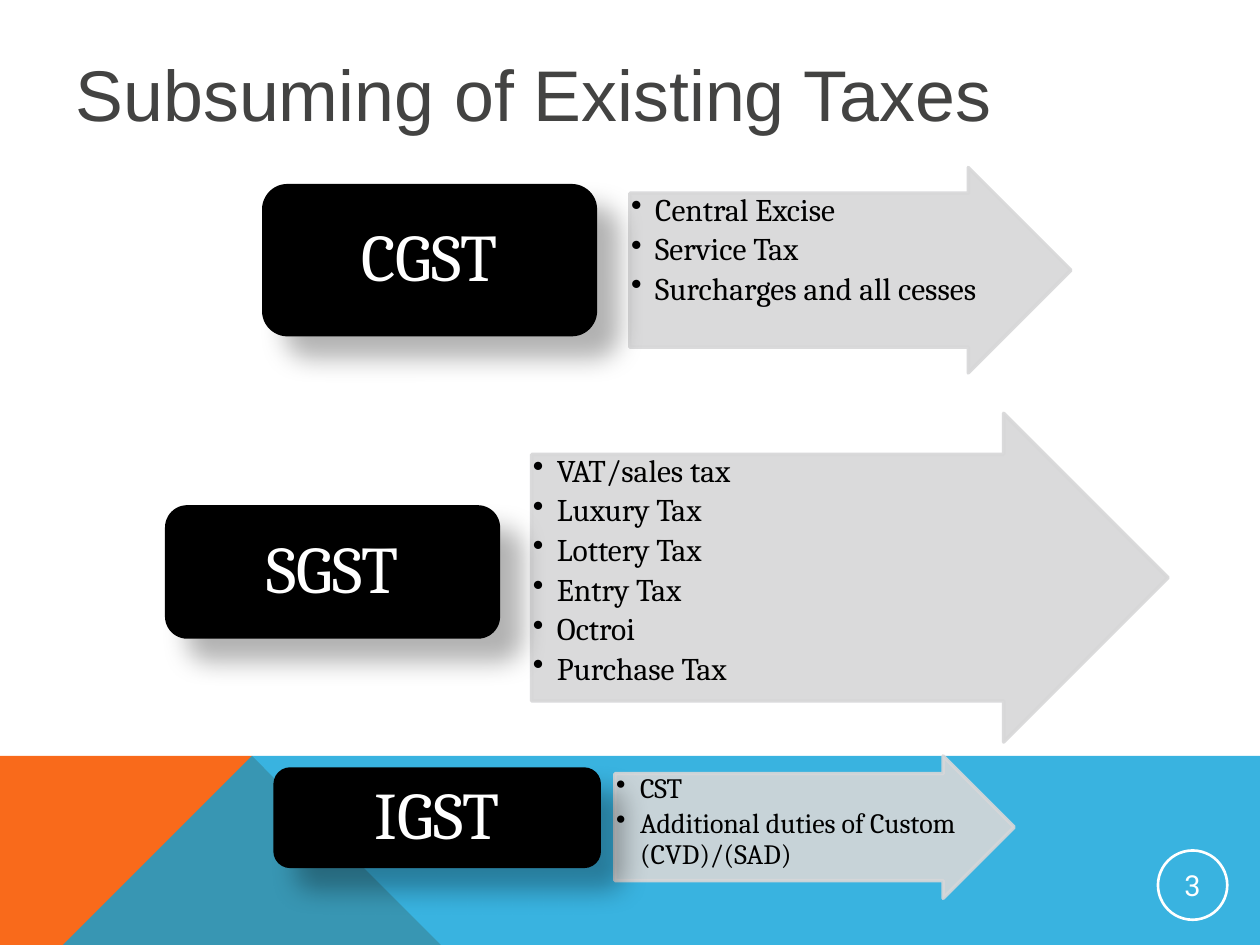
from dataclasses import dataclass

from lxml.etree import SubElement
from pptx import Presentation
from pptx.dml.color import RGBColor
from pptx.enum.shapes import MSO_SHAPE
from pptx.enum.text import MSO_ANCHOR, MSO_AUTO_SIZE, PP_ALIGN
from pptx.oxml.ns import qn
from pptx.util import Inches, Pt

COLORS = {
    "orange": "F96A1B",
    "blue": "08A1D9",
    "title": "434342",
    "arrow": "D7D7D8",
    "black": "000000",
    "white": "FFFFFF",
}
Box = tuple[float, float, float, float]


@dataclass
class TaxGroup:
    name: str
    label_box: Box
    arrow_box: Box
    taxes: list[str]
    size: float = 18


GROUPS = [
    TaxGroup("CGST", (2.08, 1.46, 2.66, 1.21), (5, 1.33, 3.5, 1.63),
             ["Central Excise", "Service Tax", "Surcharges and all cesses"]),
    TaxGroup("SGST", (1.31, 4.01, 2.66, 1.06), (4.22, 3.28, 5.05, 2.61),
             ["VAT/sales tax", "Luxury Tax", "Lottery Tax", "Entry Tax",
              "Octroi", "Purchase Tax"]),
    TaxGroup("IGST", (2.17, 6.09, 2.6, 0.8), (4.88, 6, 3.17, 1.13),
             ["CST", "Additional duties of Custom (CVD)/(SAD)"], 16),
]


def rgb(name: str) -> RGBColor:
    return RGBColor.from_string(COLORS[name])


def set_alpha(color_format, percent: int) -> None:
    """Make a solid fill that is already coloured partly transparent."""
    color = color_format._xPr.find(qn("a:solidFill"))[0]
    SubElement(color, qn("a:alpha"), val=str(percent * 1000))


def fill_shape(shape, color: str, alpha: int = 100) -> None:
    shape.shadow.inherit = False
    shape.fill.solid()
    shape.fill.fore_color.rgb = rgb(color)
    shape.line.fill.background()
    if alpha < 100:
        set_alpha(shape.fill, alpha)


def write_text(shape, lines: list[str], *, size: float, color: str, font: str,
               align=PP_ALIGN.LEFT, anchor=MSO_ANCHOR.TOP, inset: float = 0.01,
               line_spacing: float = 1.0, bullets: bool = False) -> None:
    frame = shape.text_frame
    frame.word_wrap = True
    frame.auto_size = MSO_AUTO_SIZE.NONE
    frame.vertical_anchor = anchor
    frame.margin_left = frame.margin_right = Inches(inset)
    frame.margin_top = frame.margin_bottom = Inches(inset / 2)
    for index, line in enumerate(lines):
        paragraph = frame.paragraphs[0] if index == 0 else frame.add_paragraph()
        paragraph.alignment = align
        paragraph.line_spacing = line_spacing
        run = paragraph.add_run()
        run.text = line
        run.font.size = Pt(size)
        run.font.name = font
        run.font.color.rgb = rgb(color)
        if bullets:
            paragraph.space_after = Pt(round(size * 0.18, 1))
            properties = paragraph._p.get_or_add_pPr()
            properties.set("marL", str(Inches(0.19)))
            properties.set("indent", str(-Inches(0.19)))
            SubElement(properties, qn("a:buChar"), char="•")


def add_shape(slide, kind, box: Box):
    return slide.shapes.add_shape(kind, *map(Inches, box))


def add_polygon(slide, points: list[tuple[float, float]], color: str,
                alpha: int = 100) -> None:
    builder = slide.shapes.build_freeform(*points[0], scale=Inches(1))
    builder.add_line_segments(points[1:], close=True)
    fill_shape(builder.convert_to_shape(), color, alpha)


def add_soft_shadow(shape) -> None:
    effects = shape._element.spPr.find(qn("a:effectLst"))
    shadow = SubElement(effects, qn("a:outerShdw"), blurRad=str(Pt(15)),
                        dist=str(Pt(18)), dir=str(45 * 60000), rotWithShape="0")
    color = SubElement(shadow, qn("a:srgbClr"), val=COLORS["black"])
    SubElement(color, qn("a:alpha"), val="30000")


def add_group(slide, group: TaxGroup) -> None:
    # Arrow, its shaft three quarters of its height
    arrow = add_shape(slide, MSO_SHAPE.RIGHT_ARROW, group.arrow_box)
    arrow.adjustments[0], arrow.adjustments[1] = 0.75, 0.5
    fill_shape(arrow, "arrow", 90)
    arrow.line.color.rgb = rgb("arrow")
    arrow.line.width = Pt(2)
    set_alpha(arrow.line.fill, 90)

    # List of taxes on the shaft
    left, top, width, height = group.arrow_box
    text_box = slide.shapes.add_textbox(
        Inches(left), Inches(top + height / 8),
        Inches(width - height * 3 / 8), Inches(height * 0.75))
    write_text(text_box, group.taxes, size=group.size, color="black",
               font="Cambria", line_spacing=0.9, bullets=True)

    # Label
    label = add_shape(slide, MSO_SHAPE.ROUNDED_RECTANGLE, group.label_box)
    fill_shape(label, "black")
    add_soft_shadow(label)
    write_text(label, [group.name], size=38, color="white", font="Cambria",
               align=PP_ALIGN.CENTER, anchor=MSO_ANCHOR.MIDDLE, inset=0.16,
               line_spacing=0.9)


def main() -> None:
    presentation = Presentation()
    presentation.slide_width, presentation.slide_height = Inches(10), Inches(7.5)
    slide = presentation.slides.add_slide(presentation.slide_layouts[5])

    # Coloured bands at the bottom
    add_polygon(slide, [(0, 7.5), (0, 5.52), (2.23, 5.52), (3.91, 7.5)], "orange")
    add_polygon(slide, [(0, 7.5), (2.23, 5.52), (10, 5.53), (10, 7.5)], "blue", 80)

    # Title
    title = slide.shapes.title
    title.left, title.top, title.width, title.height = map(
        Inches, (0.5, 0.3, 9, 0.87))
    write_text(title, ["Subsuming of Existing Taxes"], size=41, color="title",
               font="Arial", anchor=MSO_ANCHOR.MIDDLE, inset=0.1)

    # Tax groups
    for group in GROUPS:
        add_group(slide, group)

    # Slide number
    badge = add_shape(slide, MSO_SHAPE.OVAL, (9.19, 6.75, 0.55, 0.55))
    badge.shadow.inherit = False
    badge.fill.background()
    badge.line.color.rgb = rgb("white")
    badge.line.width = Pt(1.5)
    write_text(badge, ["3"], size=16.5, color="white", font="Roboto",
               align=PP_ALIGN.CENTER, anchor=MSO_ANCHOR.MIDDLE)

    presentation.save("out.pptx")


if __name__ == "__main__":
    main()
